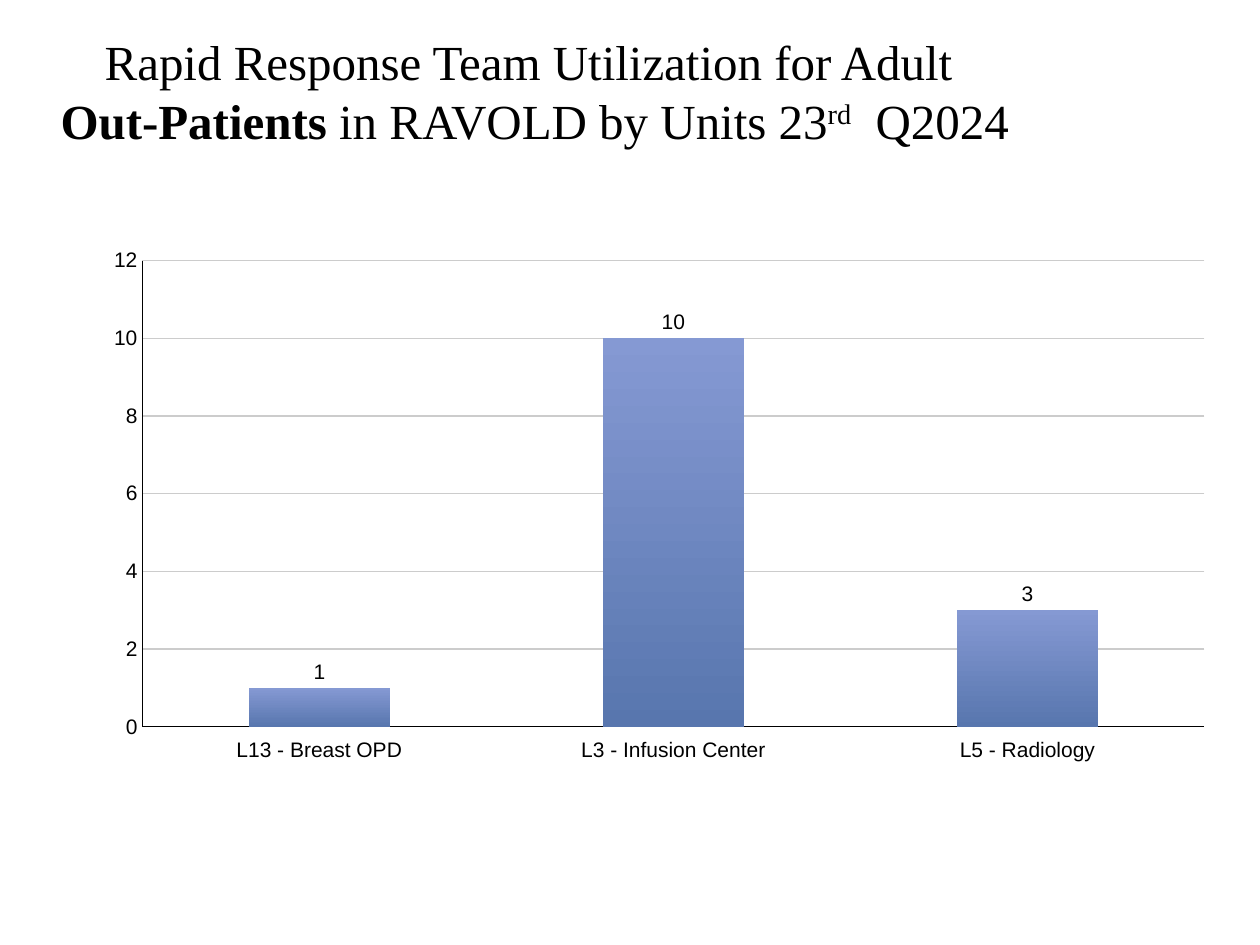
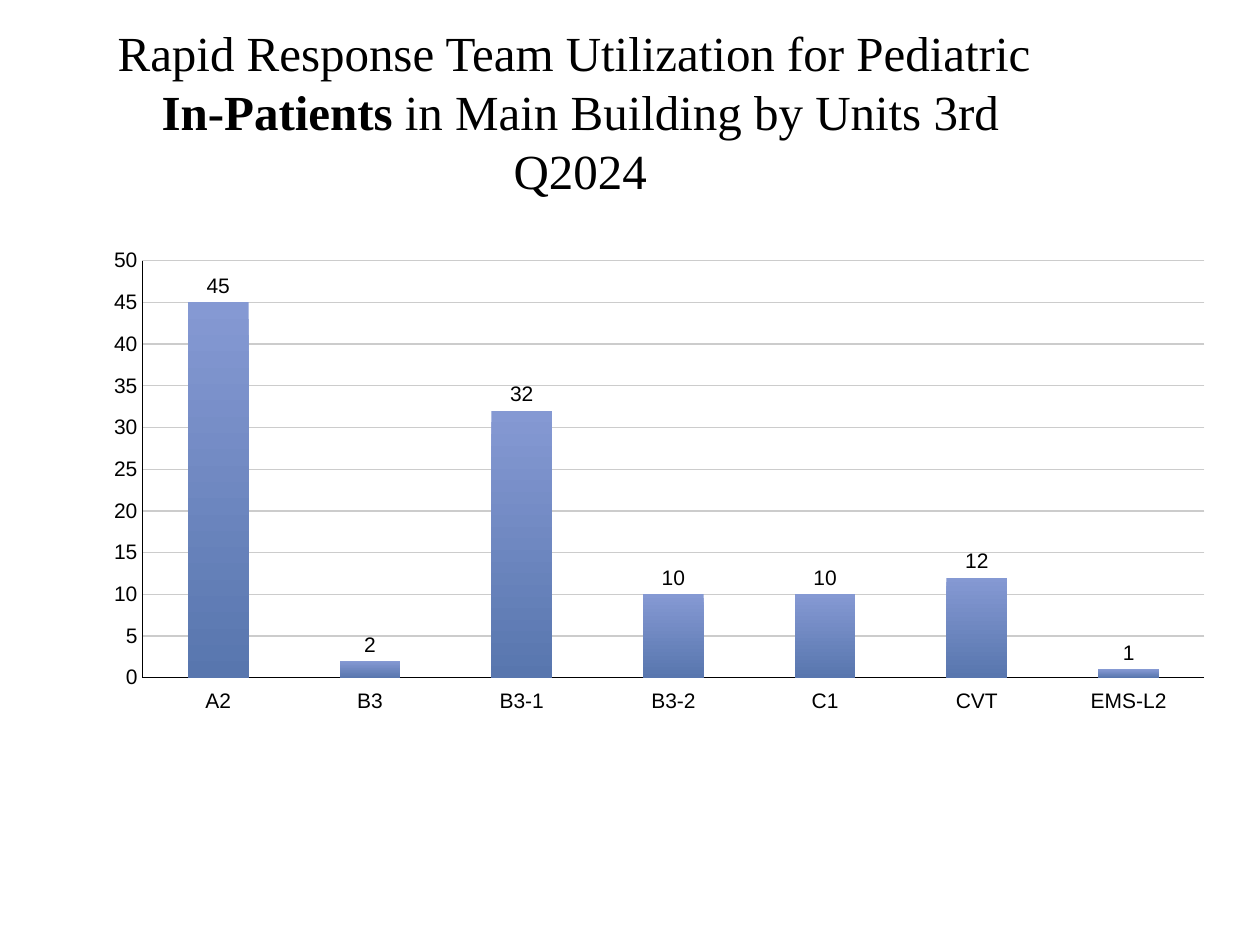
from pptx import Presentation
from pptx.chart.data import CategoryChartData
from pptx.dml.color import RGBColor
from pptx.enum.chart import XL_CHART_TYPE, XL_LABEL_POSITION, XL_TICK_LABEL_POSITION, XL_TICK_MARK
from pptx.enum.text import MSO_ANCHOR, MSO_AUTO_SIZE, PP_ALIGN
from pptx.oxml import parse_xml
from pptx.oxml.ns import nsdecls
from pptx.util import Inches, Pt

BLACK = RGBColor(0x00, 0x00, 0x00)
GRID = RGBColor(0xCC, 0xCC, 0xCC)
TOP = RGBColor(0x85, 0x99, 0xD3)
BASE = RGBColor(0x58, 0x76, 0xAE)
LEFT, UPPER, WIDE = 0.26, 1.9, 9.49
PLAIN, BOLD, SUPER = "plain", "bold", "super"


def style(font, size, name):
    font.size, font.name = Pt(size), name
    font.color.rgb = BLACK


def add_title(slide, box, inset, lines):
    title = slide.shapes.title
    title.left, title.top, title.width, title.height = map(Inches, box)
    frame = title.text_frame
    frame.word_wrap = True
    frame.auto_size = MSO_AUTO_SIZE.NONE
    frame.vertical_anchor = MSO_ANCHOR.TOP
    frame.margin_top = Inches(inset)
    for index, parts in enumerate(lines):
        para = frame.add_paragraph() if index else frame.paragraphs[0]
        para.alignment = PP_ALIGN.CENTER
        for text, kind in parts:
            run = para.add_run()
            run.text = text
            style(run.font, 28, "Times New Roman")
            run.font.bold = kind == BOLD
            if kind == SUPER:
                run.font._element.set("baseline", "30000")


def set_plot(chart, tall):
    shares = {
        "x": 0.87 / WIDE,
        "y": 0.17 / tall,
        "w": 8.43 / WIDE,
        "h": (tall - 0.99) / tall,
    }
    modes = "".join(f'<c:{key}Mode val="edge"/>' for key in "xy")
    sizes = "".join(f'<c:{key} val="{share:.4f}"/>' for key, share in shares.items())
    layout = parse_xml(
        f'<c:layout {nsdecls("c")}><c:manualLayout><c:layoutTarget val="inner"/>'
        f"{modes}{sizes}</c:manualLayout></c:layout>"
    )
    area = chart._chartSpace.chart.plotArea
    for old in area.findall(layout.tag):
        area.remove(old)
    area.insert(0, layout)


def style_axis(axis):
    axis.has_title = False
    axis.major_tick_mark = axis.minor_tick_mark = XL_TICK_MARK.NONE
    style(axis.tick_labels.font, 12, "Arial")
    axis.format.line.color.rgb = BLACK
    axis.format.line.width = Pt(0)


def add_bars(slide, tall, peak, step, counts):
    data = CategoryChartData(number_format="#0")
    data.categories = list(counts)
    data.add_series("Series 1", list(counts.values()))
    box = map(Inches, (LEFT, UPPER, WIDE, tall))
    chart = slide.shapes.add_chart(XL_CHART_TYPE.COLUMN_CLUSTERED, *box, data).chart
    chart.has_title = chart.has_legend = False
    style(chart.font, 10, "Calibri")
    set_plot(chart, tall)

    units, scale = chart.category_axis, chart.value_axis
    style_axis(units)
    style_axis(scale)
    units.tick_label_position = XL_TICK_LABEL_POSITION.LOW
    scale.minimum_scale, scale.maximum_scale, scale.major_unit = 0, peak, step
    scale.tick_labels.number_format = "#0"
    scale.tick_labels.number_format_is_linked = False
    scale.has_major_gridlines = True
    scale.major_gridlines.format.line.color.rgb = GRID
    scale.major_gridlines.format.line.width = Pt(0)

    plot = chart.plots[0]
    plot.gap_width = 150
    plot.vary_by_categories = False
    series = plot.series[0]
    fill = series.format.fill
    fill.gradient()
    fill.gradient_angle = 270
    for stop, color, place in zip(fill.gradient_stops, (TOP, BASE), (0, 1)):
        stop.color.rgb = color
        stop.position = place
    labels = series.data_labels
    labels.show_value = True
    labels.position = XL_LABEL_POSITION.OUTSIDE_END
    labels.number_format = "#0"
    labels.number_format_is_linked = False
    style(labels.font, 12, "Arial")


def main():
    deck = Presentation()
    deck.slide_width, deck.slide_height = Inches(10), Inches(7.5)
    layout = deck.slide_layouts[5]

    adult = deck.slides.add_slide(layout)
    add_title(adult, (0, 0.13, 8.39, 2.1), 0.12, [
        [("Rapid Response Team Utilization for Adult", PLAIN)],
        [(" Out-Patients ", BOLD), ("in RAVOLD by Units 23", PLAIN),
         ("rd", SUPER), ("  Q2024", PLAIN)],
    ])
    add_bars(adult, 4.69, 12, 2, {
        "L13 - Breast OPD": 1, "L3 - Infusion Center": 10, "L5 - Radiology": 3,
    })

    child = deck.slides.add_slide(layout)
    add_title(child, (0.67, 0.13, 7.87, 1.51), 0.05, [
        [("Rapid Response Team Utilization for Pediatric ", PLAIN)],
        [("In-Patients", BOLD), (" in Main Building by Units 3rd Q2024", PLAIN)],
    ])
    add_bars(child, 4.3, 50, 5, {
        "A2": 45, "B3": 2, "B3-1": 32, "B3-2": 10, "C1": 10, "CVT": 12, "EMS-L2": 1,
    })
    deck.save("out.pptx")


if __name__ == "__main__":
    main()
